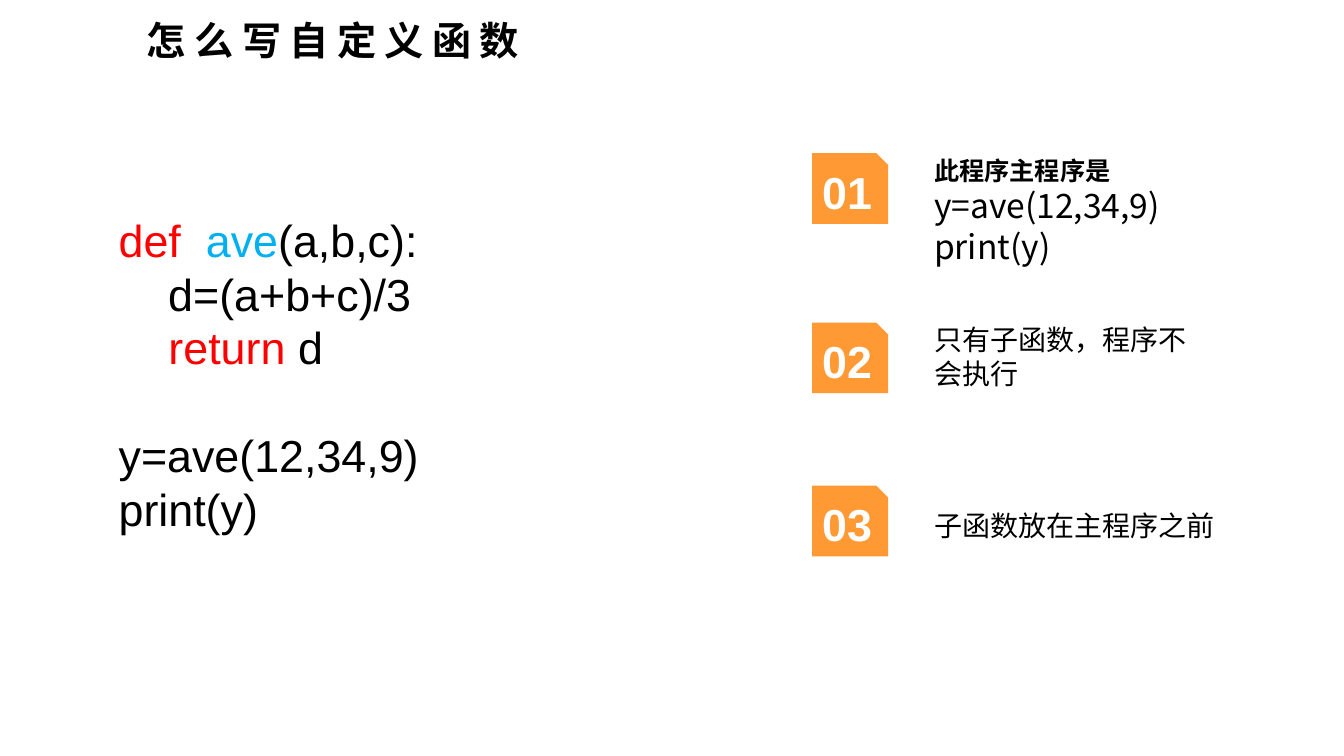
import pptx
import pptx.util
import pptx.dml.color
import pptx.enum.shapes
import pptx.enum.text
import pptx.oxml.ns

Cm, Pt = pptx.util.Cm, pptx.util.Pt
ANCHOR = pptx.enum.text.MSO_ANCHOR
ALIGN = pptx.enum.text.PP_ALIGN
CJK = "Noto Sans CJK SC"
BLACK, WHITE, RED, BLUE, ORANGE = "000000", "FFFFFF", "FF0000", "00B0F0", "FF9933"


def colour(value):
    return pptx.dml.color.RGBColor.from_string(value)


class SlideBuilder:
    """Holds the text style and the current slide."""

    def __init__(self, page):
        self.page = page
        self.style = {"name": "Arial", "size": Pt(20), "bold": False}

    def add_span(self, para, text, fill=BLACK, **style):
        span = para.add_run()
        span.text = text
        for name, value in {**self.style, **style}.items():
            setattr(span.font, name, value)
        span.font.color.rgb = colour(fill)
        east_asian = span.font._element.makeelement(
            pptx.oxml.ns.qn("a:ea"), {"typeface": CJK})
        span.font._element.append(east_asian)
        return span

    def fill_frame(self, frame, lines, anchor=ANCHOR.TOP, wrap=True):
        """Each line is (paragraph format, list of (text, span style))."""
        frame.word_wrap = wrap
        frame.vertical_anchor = anchor
        frame.auto_size = pptx.enum.text.MSO_AUTO_SIZE.NONE
        for index, (layout, spans) in enumerate(lines):
            para = frame.add_paragraph() if index else frame.paragraphs[0]
            for name, value in layout.items():
                setattr(para, name, value)
            for text, style in spans:
                self.add_span(para, text, **style)

    def title(self, text, left, top, width, height):
        box = self.page.shapes.title
        place = {"left": left, "top": top, "width": width, "height": height}
        for name, value in place.items():
            setattr(box, name, Cm(value))
        layout = {"line_spacing": 0.9, "alignment": ALIGN.LEFT}
        style = {"name": CJK, "size": Pt(28), "bold": True}
        self.fill_frame(box.text_frame, [(layout, [(text, style)])])
        # Letter spacing in hundredths of a point
        span = box.text_frame.paragraphs[0].runs[0]
        span.font._element.set("spc", "600")

    def text(self, lines, left, top, width, height):
        box = self.page.shapes.add_textbox(Cm(left), Cm(top), Cm(width), Cm(height))
        self.fill_frame(box.text_frame, lines)

    def badge(self, number, left, top, width, height):
        box = self.page.shapes.add_shape(
            pptx.enum.shapes.MSO_SHAPE.SNIP_1_RECTANGLE,
            Cm(left), Cm(top), Cm(width), Cm(height))
        box.shadow.inherit = False
        box.fill.solid()
        box.fill.fore_color.rgb = colour(ORANGE)
        box.line.fill.background()
        style = {"fill": WHITE, "size": Pt(32), "bold": True}
        line = ({"alignment": ALIGN.CENTER}, [(f"{number:02d}", style)])
        self.fill_frame(box.text_frame, [line], ANCHOR.MIDDLE, wrap=False)


def main():
    deck = pptx.Presentation()
    deck.slide_width, deck.slide_height = Cm(33.87), Cm(19.05)
    builder = SlideBuilder(deck.slides.add_slide(deck.slide_layouts[5]))

    # Title
    builder.title("怎么写自定义函数", 3.45, 0.41, 25.43, 1.65)

    # Numbered notes: badge top, text top, text width, text height, lines
    loose = {"line_spacing": 1.5}
    call = {"name": CJK, "size": Pt(24)}
    notes = [
        (3.86, 3.4, 7.37, 3.45, [
            (loose, [("此程序主程序是", {"size": Pt(18), "bold": True})]),
            ({}, [("y=ave(12,34,9)", call)]),
            ({}, [("print(y)", call)])]),
        (8.13, 8, 7.37, 1.96, [({}, [("只有子函数，程序不会执行", {})])]),
        (12.24, 12.27, 7.85, 1.55, [(loose, [("子函数放在主程序之前", {})])]),
    ]
    for number, (badge_top, text_top, width, height, lines) in enumerate(notes, 1):
        builder.text(lines, 23.29, text_top, width, height)
        builder.badge(number, 20.47, badge_top, 1.91, 1.78)

    # Code sample; the main program stands one line below the function
    code = {"size": Pt(32)}
    keyword, function = {**code, "fill": RED}, {**code, "fill": BLUE}
    builder.text([
        ({}, [("def  ", keyword), ("ave", function), ("(a,b,c):", code)]),
        ({}, [("    d=(a+b+c)/3", code)]),
        ({}, [("    ", code), ("return", keyword), (" d", code)]),
        ({"space_before": Pt(38.4)}, [("y=ave(12,34,9)", code)]),
        ({}, [("print(y)", code)]),
    ], 2.74, 5.23, 12.01, 8.46)

    deck.save("out.pptx")


if __name__ == "__main__":
    main()
